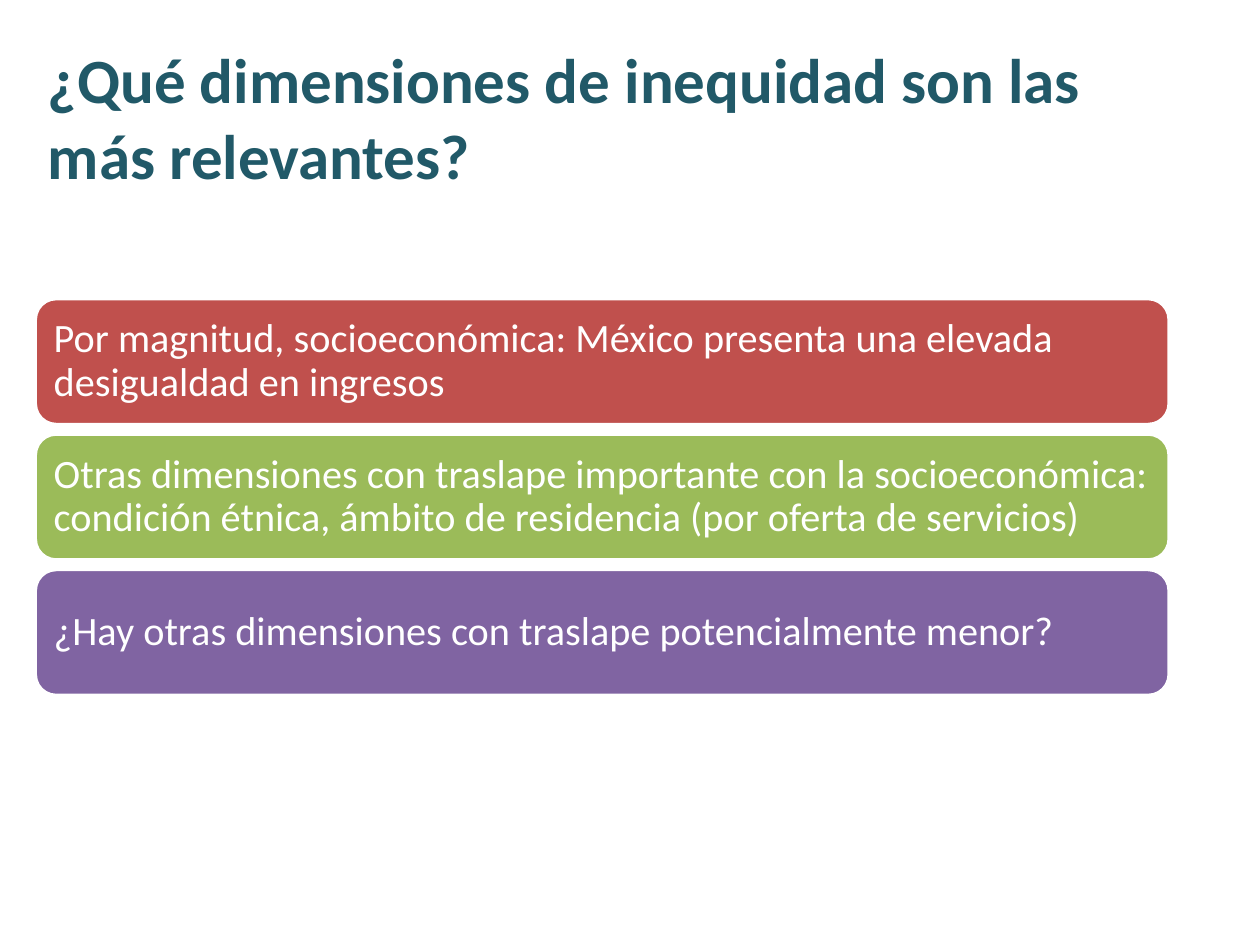
"""Build a slide with a question as title and three stacked answer bars."""
import pptx
import pptx.util
import pptx.dml.color
import pptx.enum.shapes
import pptx.enum.text

Inches = pptx.util.Inches
Pt = pptx.util.Pt
RGBColor = pptx.dml.color.RGBColor
COLORS = {
    "title": "215968",
    "white": "FFFFFF",
    "red": "C0504D",
    "green": "9BBB59",
    "purple": "8064A2",
}
BARS = [
    ("red", "Por magnitud, socioeconómica: México presenta una elevada desigualdad en ingresos"),
    ("green", "Otras dimensiones con traslape importante con la socioeconómica: "
              "condición étnica, ámbito de residencia (por oferta de servicios)"),
    ("purple", "¿Hay otras dimensiones con traslape potencialmente menor?"),
]


def format_text(box, size, color, bold=False):
    frame = box.text_frame
    frame.word_wrap = True
    frame.auto_size = pptx.enum.text.MSO_AUTO_SIZE.NONE
    frame.vertical_anchor = pptx.enum.text.MSO_ANCHOR.MIDDLE
    para = frame.paragraphs[0]
    para.alignment = pptx.enum.text.PP_ALIGN.LEFT
    para.font.name = "Calibri"
    para.font.size = Pt(size)
    para.font.bold = bold
    para.font.color.rgb = RGBColor.from_string(COLORS[color])
    return frame


deck = pptx.Presentation()
deck.slide_width = Inches(10)
deck.slide_height = Inches(7.5)
page = deck.slides.add_slide(deck.slide_layouts[5])

title = page.shapes.title
title.left, title.top = Inches(0.28), Inches(0.3)
title.width, title.height = Inches(8.98), Inches(1.25)
title.text_frame.text = "¿Qué dimensiones de inequidad son las más relevantes?"
format_text(title, 36, "title", bold=True)

for index, (color, text) in enumerate(BARS):
    bar = page.shapes.add_shape(
        pptx.enum.shapes.MSO_SHAPE.ROUNDED_RECTANGLE,
        Inches(0.28), Inches(2.37 + 1.075 * index), Inches(9), Inches(1))
    bar.shadow.inherit = False
    bar.fill.solid()
    bar.fill.fore_color.rgb = RGBColor.from_string(COLORS[color])
    bar.line.color.rgb = RGBColor.from_string(COLORS["white"])
    bar.line.width = Pt(2)
    bar.text_frame.text = text
    frame = format_text(bar, 23, "white")
    frame.margin_left = frame.margin_right = Inches(0.1)
    frame.margin_top = frame.margin_bottom = Inches(0.1)
    frame.paragraphs[0].line_spacing = 0.9

deck.save("out.pptx")
